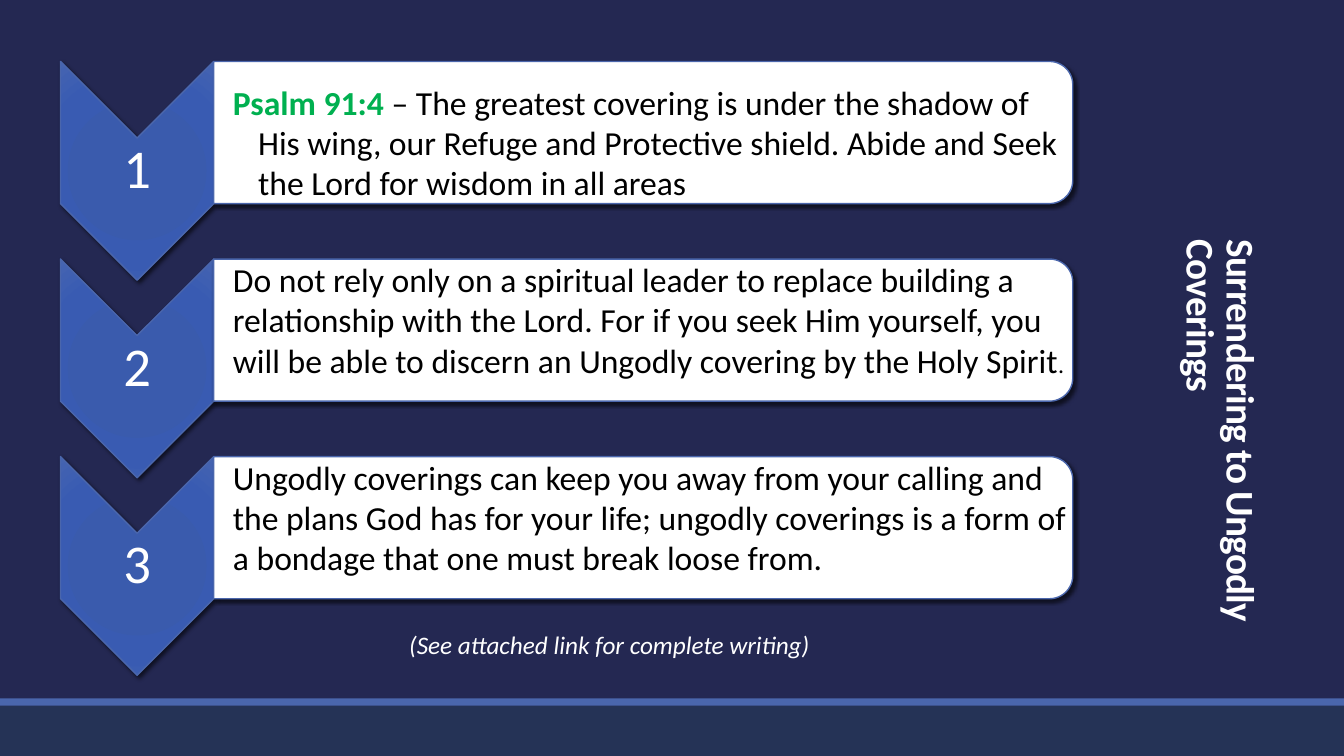
import math
from dataclasses import dataclass

from lxml import etree
from pptx import Presentation
from pptx.dml.color import RGBColor
from pptx.enum.shapes import MSO_SHAPE
from pptx.enum.text import MSO_ANCHOR, PP_ALIGN
from pptx.oxml import parse_xml
from pptx.oxml.ns import qn
from pptx.util import Inches, Pt

RECTANGLE = MSO_SHAPE.RECTANGLE
TOP, MIDDLE, BOTTOM = MSO_ANCHOR.TOP, MSO_ANCHOR.MIDDLE, MSO_ANCHOR.BOTTOM
LEFT, CENTER = PP_ALIGN.LEFT, PP_ALIGN.CENTER
DRAWING_NS = "http://schemas.openxmlformats.org/drawingml/2006/main"


@dataclass(frozen=True)
class Theme:
    font: str = "Calibri"
    background: str = "242852"
    footer: str = "253356"
    accent: str = "4A66AC"
    white: str = "FFFFFF"
    black: str = "000000"
    verse: str = "00B050"
    chevron_stops: tuple = ((0, "3759AE"), (34, "3A5BAD"), (70, "395BB2"), (100, "4564B1"))
    title_size: float = 28
    number_size: float = 39
    body_size: float = 24
    period_size: float = 17
    note_size: float = 18


THEME = Theme()

# Each card: top inset, hanging indent, runs of (text, size, colour, bold)
BODY = (THEME.body_size, THEME.black, False)
CARDS = (
    (0.2, 0.25, (
        ("Psalm 91:4 ", THEME.body_size, THEME.verse, True),
        ("– The greatest covering is under the shadow of His wing, our Refuge and "
         "Protective shield. Abide and Seek the Lord for wisdom in all areas", *BODY),
    )),
    (0, 0, (
        ("Do not rely only on a spiritual leader to replace building a relationship "
         "with the Lord. For if you seek Him yourself, you will be able to discern an "
         "Ungodly covering by the Holy Spirit", *BODY),
        (".", THEME.period_size, THEME.black, False),
    )),
    (0, 0, (
        ("Ungodly coverings can keep you away from your calling and the plans God has "
         "for your life; ungodly coverings is a form of a bondage that one must break "
         "loose from.", *BODY),
    )),
)


def rgb(color):
    return RGBColor.from_string(color)


def add_run(paragraph, text, size, color, bold=False, italic=False):
    run = paragraph.add_run()
    run.text = text
    font = run.font
    font.name, font.size, font.bold, font.italic = THEME.font, Pt(size), bold, italic
    font.color.rgb = rgb(color)
    return run


def prepare_text(shape, anchor, insets, alignment=LEFT, wrap=True):
    frame = shape.text_frame
    frame.word_wrap = wrap
    frame.vertical_anchor = anchor
    (frame.margin_left, frame.margin_top,
     frame.margin_right, frame.margin_bottom) = map(Inches, insets)
    paragraph = frame.paragraphs[0]
    paragraph.alignment = alignment
    return paragraph


def add_outline(slide, points):
    """Draw a closed shape with the accent line and a soft shadow."""
    corners = [(Inches(x), Inches(y)) for x, y in points]
    builder = slide.shapes.build_freeform(*corners[0], scale=1.0)
    builder.add_line_segments(corners[1:], close=True)
    shape = builder.convert_to_shape()
    shape.fill.solid()
    shape.fill.fore_color.rgb = rgb(THEME.white)
    shape.line.color.rgb = rgb(THEME.accent)
    shape.line.width = Pt(1)
    shape.shadow.inherit = False
    effects = shape._element.spPr.find(qn("a:effectLst"))
    effects.append(parse_xml(
        f'<a:outerShdw xmlns:a="{DRAWING_NS}" blurRad="{Pt(3)}" dist="{Pt(2)}" '
        f'dir="2700000" algn="tl" rotWithShape="0"><a:srgbClr val="{THEME.black}">'
        '<a:alpha val="60000"/></a:srgbClr></a:outerShdw>'))
    return shape


def fill_radial(shape, stops):
    gradient = etree.Element(qn("a:gradFill"), rotWithShape="1")
    stop_list = etree.SubElement(gradient, qn("a:gsLst"))
    for position, color in stops:
        stop = etree.SubElement(stop_list, qn("a:gs"), pos=str(position * 1000))
        etree.SubElement(stop, qn("a:srgbClr"), val=color)
    radial = etree.SubElement(gradient, qn("a:path"))
    radial.set("path", "circle")
    etree.SubElement(radial, qn("a:fillToRect"), l="100000", t="100000", r="100000", b="100000")
    properties = shape._element.spPr
    properties.replace(properties.find(qn("a:solidFill")), gradient)


def add_chevron(slide, left, top, width, height, number):
    middle, right, point = left + width / 2, left + width, width / 2
    shape = add_outline(slide, (
        (right, top), (right, top + height - point), (middle, top + height),
        (left, top + height - point), (left, top), (middle, top + point)))
    fill_radial(shape, THEME.chevron_stops)
    paragraph = prepare_text(shape, MIDDLE, (0.03, 0, 0.03, 0), CENTER)
    paragraph.line_spacing = 0.9
    add_run(paragraph, str(number), THEME.number_size, THEME.white)


def add_card(slide, left, top, width, height, top_inset, indent, runs):
    radius, steps = 0.23, 12
    center_x = left + width - radius
    points = [(left, top)]
    for center_y, start in ((top + radius, -90), (top + height - radius, 0)):
        for step in range(steps + 1):
            angle = math.radians(start + 90 * step / steps)
            points.append((center_x + radius * math.cos(angle),
                           center_y + radius * math.sin(angle)))
    points.append((left, top + height))
    shape = add_outline(slide, points)
    paragraph = prepare_text(shape, TOP, (0.19, top_inset, 0.06, 0))
    if indent:
        properties = paragraph._p.get_or_add_pPr()
        properties.set("marL", str(Inches(indent)))
        properties.set("indent", str(Inches(-indent)))
    for run in runs:
        add_run(paragraph, *run)


def add_steps(slide, left, top, pitch):
    chevron_width, chevron_height = 1.52, 2.17
    for index, card in enumerate(CARDS):
        row = top + index * pitch
        add_chevron(slide, left, row, chevron_width, chevron_height, index + 1)
        add_card(slide, left + chevron_width, row, 8.52, 1.41, *card)


def add_footer(slide, left, top, width, height):
    stripe = 0.07
    for y, band_height, color in ((top + stripe, height - stripe, THEME.footer),
                                  (top, stripe, THEME.accent)):
        band = slide.shapes.add_shape(
            RECTANGLE, Inches(left), Inches(y), Inches(width), Inches(band_height))
        band.fill.solid()
        band.fill.fore_color.rgb = rgb(color)
        band.line.fill.background()
        band.shadow.inherit = False


def add_title(slide, left, top, width, height):
    box = slide.shapes.add_textbox(Inches(left), Inches(top), Inches(width), Inches(height))
    box.rotation = 90
    paragraph = prepare_text(box, BOTTOM, (0.1, 0.05, 0.1, 0.05))
    paragraph.line_spacing = 0.85
    run = add_run(paragraph, "Surrendering to Ungodly Coverings",
                  THEME.title_size, THEME.white, bold=True)
    run._r.get_or_add_rPr().set("spc", "-50")


def add_note(slide, left, top, width, height):
    box = slide.shapes.add_textbox(Inches(left), Inches(top), Inches(width), Inches(height))
    paragraph = prepare_text(box, TOP, (0.1, 0.05, 0.1, 0.05), CENTER, wrap=False)
    add_run(paragraph, "(See attached link for complete writing)",
            THEME.note_size, THEME.white, italic=True)


def main():
    presentation = Presentation()
    presentation.slide_width, presentation.slide_height = Inches(13.33), Inches(7.5)
    slide = presentation.slides.add_slide(presentation.slide_layouts[6])
    slide.background.fill.solid()
    slide.background.fill.fore_color.rgb = rgb(THEME.background)
    add_footer(slide, 0, 6.93, 13.33, 0.57)
    add_title(slide, 9.88, 4.04, 4.42, 0.9)
    add_steps(slide, 0.6, 0.61, 1.96)
    add_note(slide, 3.92, 6.19, 4.25, 0.4)
    presentation.save("out.pptx")


if __name__ == "__main__":
    main()
